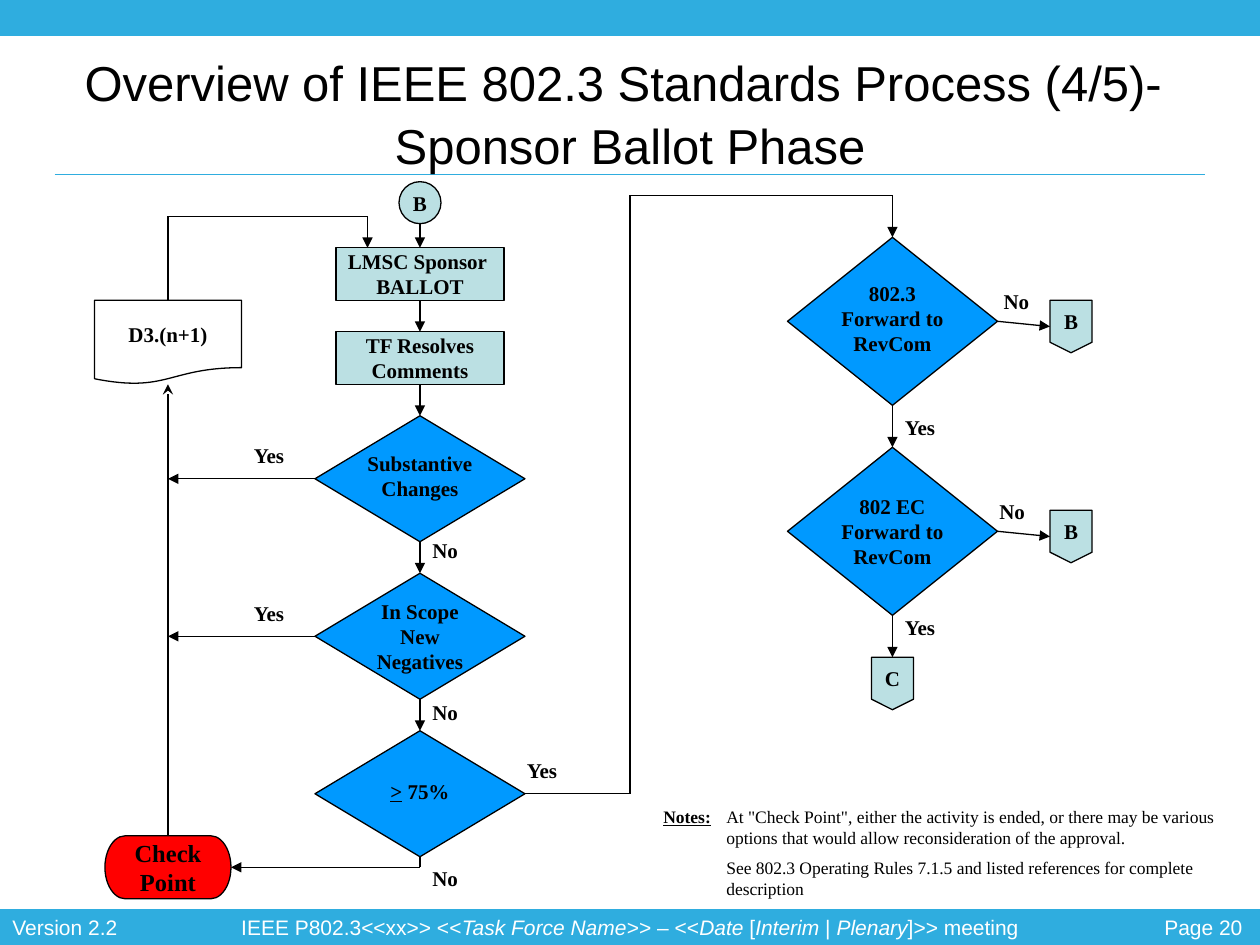
from lxml import etree
from pptx import Presentation
from pptx.dml.color import RGBColor
from pptx.enum.shapes import MSO_CONNECTOR, MSO_SHAPE
from pptx.enum.text import MSO_ANCHOR, PP_ALIGN
from pptx.oxml.ns import qn
from pptx.util import Inches, Pt

STRAIGHT = MSO_CONNECTOR.STRAIGHT
RECTANGLE = MSO_SHAPE.RECTANGLE
PROCESS = MSO_SHAPE.FLOWCHART_PROCESS
DECISION = MSO_SHAPE.FLOWCHART_DECISION
CIRCLE = MSO_SHAPE.FLOWCHART_CONNECTOR
OFFPAGE = MSO_SHAPE.FLOWCHART_OFFPAGE_CONNECTOR
DOCUMENT = MSO_SHAPE.FLOWCHART_DOCUMENT
TERMINATOR = MSO_SHAPE.FLOWCHART_TERMINATOR
LEFT, CENTER, RIGHT = PP_ALIGN.LEFT, PP_ALIGN.CENTER, PP_ALIGN.RIGHT
MIDDLE, TOP = MSO_ANCHOR.MIDDLE, MSO_ANCHOR.TOP
TOP_SIDE, LEFT_SIDE, BOTTOM_SIDE, RIGHT_SIDE = range(4)

COLORS = {"band": "2FADDF", "pale": "BBE0E3", "blue": "0099FF", "red": "FF0000",
          "white": "FFFFFF", "black": "000000"}
WIDTH, HEIGHT = 10, 7.5
CELL = 1 / 12
GRID_TOP = 1.3


def color(name):
    return RGBColor.from_string(COLORS[name])


def write(frame, paragraphs, *, size=12, font="Times New Roman", ink="black", bold=False,
          align=LEFT, anchor=TOP, wrap=False, insets=(0.05, 0.05), hanging=0,
          gap=0, spacing=None):
    """Fill a frame; a paragraph is a string or a list of strings and (text, format) runs."""
    frame.word_wrap = wrap
    frame.vertical_anchor = anchor
    frame.margin_left = frame.margin_right = Inches(0.1)
    frame.margin_top, frame.margin_bottom = map(Inches, insets)
    for index, runs in enumerate(paragraphs):
        paragraph = frame.add_paragraph() if index else frame.paragraphs[0]
        paragraph.alignment = align
        paragraph.line_spacing = spacing
        if index and gap:
            paragraph.space_before = Pt(gap)
        if hanging:
            properties = paragraph._p.get_or_add_pPr()
            properties.set("marL", str(Inches(hanging)))
            properties.set("indent", str(-Inches(hanging)))
        for item in [runs] if isinstance(runs, str) else runs:
            text, extra = (item, {}) if isinstance(item, str) else item
            run = paragraph.add_run()
            run.text = text
            run.font.name = font
            run.font.size = Pt(size)
            run.font.color.rgb = color(ink)
            run.font.bold = bold
            for name, value in extra.items():
                setattr(run.font, name, value)


class FlowSlide:
    def __init__(self, presentation):
        self.slide = presentation.slides.add_slide(presentation.slide_layouts[6])
        self.shapes = self.slide.shapes

    def point(self, column, row):
        return Inches(column * CELL), Inches(GRID_TOP + row * CELL)

    def cells(self, column, row, columns, rows):
        return (*self.point(column, row), Inches(columns * CELL), Inches(rows * CELL))

    def share(self, left, top, width, height):
        return (Inches(left * WIDTH), Inches(top * HEIGHT),
                Inches(width * WIDTH), Inches(height * HEIGHT))

    def block(self, kind, area, fill, paragraphs=(), line="black", **style):
        shape = self.shapes.add_shape(kind, *area)
        shape.shadow.inherit = False
        shape.fill.solid()
        shape.fill.fore_color.rgb = color(fill)
        shape.line.color.rgb = color(line)
        shape.line.width = Pt(0.75)
        if paragraphs:
            write(shape.text_frame, paragraphs,
                  **{"bold": True, "align": CENTER, "anchor": MIDDLE, **style})
        return shape

    def text(self, area, paragraphs, **style):
        write(self.shapes.add_textbox(*area).text_frame, paragraphs, **style)

    def label(self, word, column, row):
        self.text(self.cells(column, row, 6 if word == "Yes" else 5, 3.6), [word], bold=True)

    def link(self, start, end, head=None, ink="black"):
        """Draw a line; each end is a (column, row) point or a (shape, side) joint."""
        joints = [isinstance(place[0], (int, float)) is False for place in (start, end)]
        points = [(0, 0) if joint else self.point(*place)
                  for joint, place in zip(joints, (start, end))]
        connector = self.shapes.add_connector(STRAIGHT, *points[0], *points[1])
        if joints[0]:
            connector.begin_connect(*start)
        if joints[1]:
            connector.end_connect(*end)
        connector.line.color.rgb = color(ink)
        connector.line.width = Pt(0.75)
        if head:
            etree.SubElement(connector.line._get_or_add_ln(), qn("a:tailEnd"), type=head)
        etree.SubElement(connector._element.spPr, qn("a:effectLst"))

    def arrow(self, start, end):
        self.link(start, end, "triangle")

    def route(self, *places):
        """Chain lines through the places and end with an arrowhead."""
        for start, end in zip(places[:-2], places[1:-1]):
            self.link(start, end)
        self.arrow(places[-2], places[-1])


def add_frame(page):
    page.block(RECTANGLE, page.share(0, 0.963, 1, 0.037), "band", line="band")
    page.block(RECTANGLE, page.share(0, 0, 1, 0.037), "band", line="band")
    page.link((5.2, 1.05), (114.8, 1.05), ink="band")
    footer = {"font": "Arial", "ink": "white"}
    italic = {"italic": True}
    page.text(page.share(0.87, 0.961, 0.126, 0.04), ["Page 20"], align=RIGHT, wrap=True, **footer)
    page.text(page.share(0, 0.961, 0.104, 0.04), ["Version 2.2"], **footer)
    meeting = ["IEEE P802.3<<xx>> <<", ("Task Force Name", italic), ">> – <<", ("Date", italic),
               " [", ("Interim", italic), " | ", ("Plenary", italic), "]>> meeting"]
    page.text(page.share(0, 0.961, 1, 0.04), [meeting], align=CENTER, wrap=True, **footer)
    page.text(page.share(0.05, 0.06, 0.9, 0.116),
              ["Overview of IEEE 802.3 Standards Process (4/5)- ", "Sponsor Ballot Phase"],
              size=28, font="Arial", align=CENTER, anchor=MIDDLE, wrap=True, spacing=1.07)


def add_ballot_flow(page):
    """Draw the left column and return its last decision."""
    page.block(CIRCLE, page.cells(38, 1.7, 4, 4), "pale", ["B"])
    ballot, resolve = [page.block(PROCESS, page.cells(32, row, 16, 5), "pale", lines)
                       for row, lines in ((8, ["LMSC Sponsor ", "BALLOT"]),
                                          (16, ["TF Resolves", "Comments"]))]
    decisions = [
        page.block(DECISION, page.cells(30, 24 + 15 * step, 20, 12), "blue", lines,
                   insets=(0, bottom))
        for step, (lines, bottom) in enumerate((
            (["Substantive", "Changes"], 0.05),
            (["In Scope", "New", "Negatives"], 0),
            ([[(">", {"underline": True}), " 75%"]], 0.05)))]
    draft = page.block(DOCUMENT, page.cells(9, 13, 14, 8), "white", ["D3.(n+1)"])
    check = page.block(TERMINATOR, page.cells(10, 64, 12, 6), "red", ["Check", "Point"],
                       size=14, insets=(0, 0))

    page.arrow((40, 5.7), (ballot, TOP_SIDE))
    steps = [ballot, resolve, *decisions]
    for upper, lower in zip(steps, steps[1:]):
        page.arrow((upper, BOTTOM_SIDE), (lower, TOP_SIDE))
    for decision, row in zip(decisions, (30, 45)):
        page.arrow((decision, LEFT_SIDE), (16, row))
        page.label("Yes", 23, row - 4)
    page.route((decisions[-1], BOTTOM_SIDE), (40, 67), (check, RIGHT_SIDE))
    page.link((check, TOP_SIDE), (16, 21), "stealth")
    page.route((draft, TOP_SIDE), (16, 5), (35, 5), (35, 8))
    for row in (35, 50.4, 66.2):
        page.label("No", 40, row)
    return decisions[-1]


def add_approval_flow(page, threshold):
    forward = [page.block(DECISION, page.cells(75, row, 20, 16), "blue",
                          [name, "Forward to", "RevCom"], insets=(top, 0.05))
               for name, row, top in (("802.3", 7, 0), ("802 EC", 27, 0.05))]
    finish = page.block(OFFPAGE, page.cells(83, 47, 4, 5), "pale", ["C"])
    page.route((threshold, RIGHT_SIDE), (60, 60), (60, 3), (85, 3), (forward[0], TOP_SIDE))
    page.label("Yes", 49, 56)
    for decision, following, row, label_column, yes_row in zip(
            forward, (forward[1], finish), (13, 33), (94.4, 94), (23.3, 42.3)):
        restart = page.block(OFFPAGE, page.cells(100, row, 4, 5), "pale", ["B"])
        page.arrow((decision, RIGHT_SIDE), (restart, LEFT_SIDE))
        page.arrow((decision, BOTTOM_SIDE), (following, TOP_SIDE))
        page.label("No", label_column, row - 1.7)
        page.label("Yes", 85, yes_row)


def add_notes(page):
    page.text(page.cells(62, 60.6, 56, 10.2), [
        [("Notes:", {"bold": True, "underline": True}),
         ' \tAt "Check Point", either the activity is ended, or there may be various '
         "options that would allow reconsideration of the approval."],
        "\tSee 802.3 Operating Rules 7.1.5 and listed references for complete description",
    ], size=10, wrap=True, hanging=0.5, gap=5)


def main():
    presentation = Presentation()
    presentation.slide_width, presentation.slide_height = Inches(WIDTH), Inches(HEIGHT)
    page = FlowSlide(presentation)
    add_frame(page)
    threshold = add_ballot_flow(page)
    add_approval_flow(page, threshold)
    add_notes(page)
    presentation.save("out.pptx")


if __name__ == "__main__":
    main()
